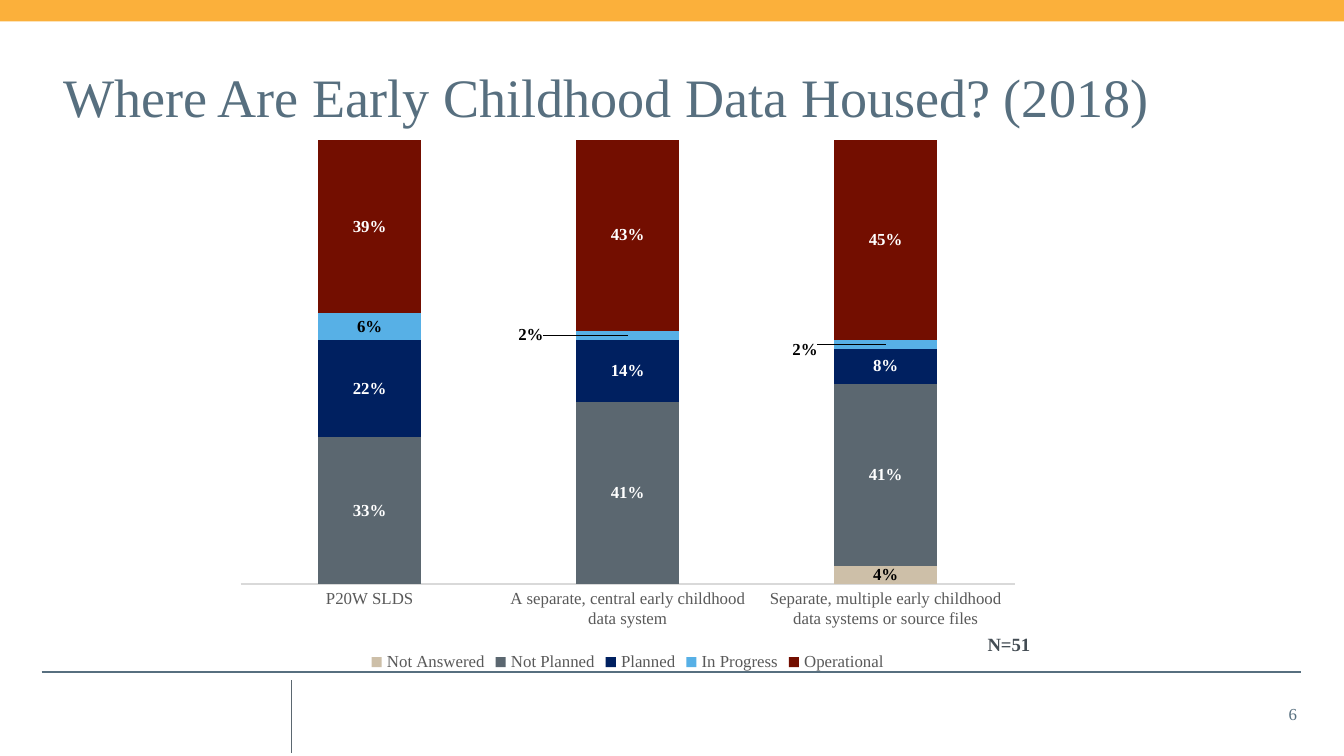
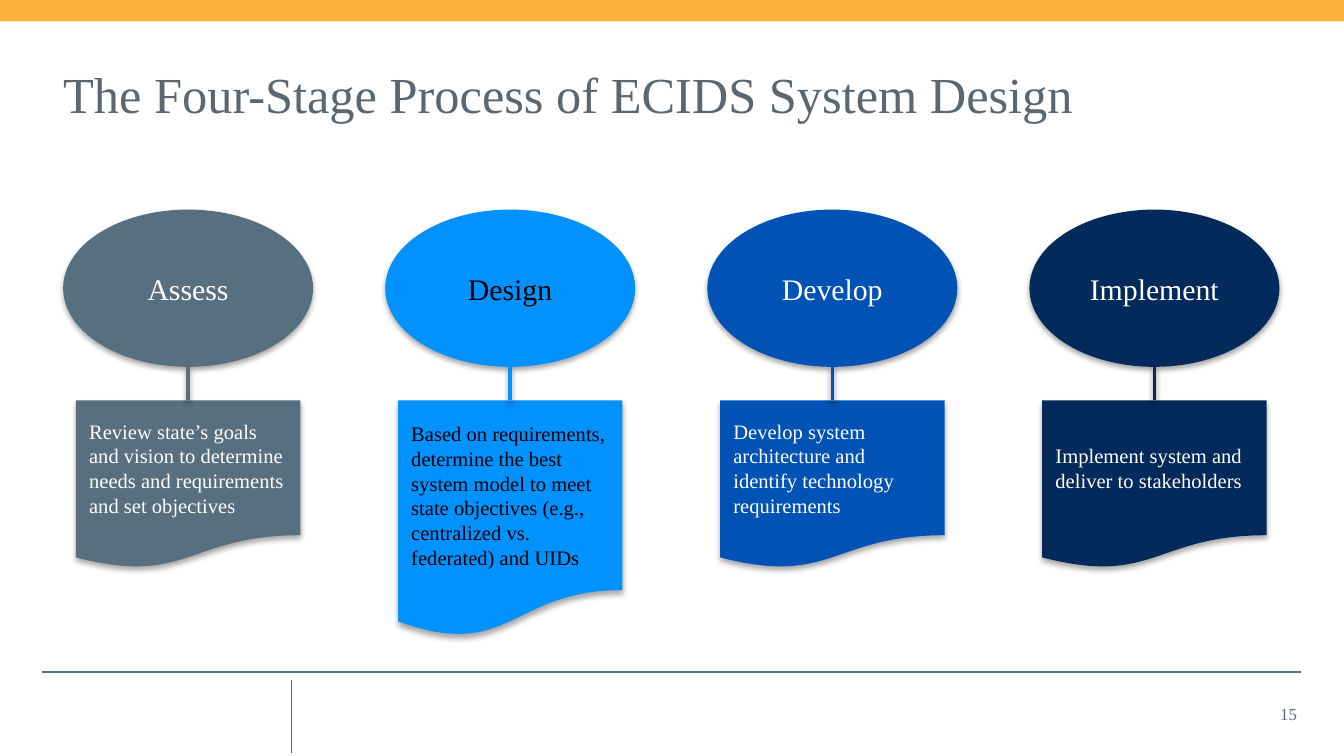
from collections import namedtuple

from pptx import Presentation
from pptx import util as u
from pptx.chart.data import CategoryChartData
from pptx.dml.color import RGBColor
from pptx.enum import chart as ch
from pptx.enum import shapes, text
from pptx.oxml import parse_xml
from pptx.oxml.ns import nsdecls, qn

FONT = "Times New Roman"
SLATE = RGBColor(0x57, 0x6F, 0x7F)
GRAY = RGBColor(0x5B, 0x67, 0x70)
AMBER = RGBColor(0xFB, 0xB0, 0x3B)
WHITE = RGBColor(0xFF, 0xFF, 0xFF)
BLACK = RGBColor(0, 0, 0)
NOTE = RGBColor(0x44, 0x4D, 0x54)
AXIS_TEXT = RGBColor(0x59, 0x59, 0x59)
AXIS_LINE = RGBColor(0xD9, 0xD9, 0xD9)
SAND = RGBColor(0xCD, 0xBF, 0xA8)
NAVY = RGBColor(0x00, 0x20, 0x60)
SKY = RGBColor(0x57, 0xB0, 0xE6)
MAROON = RGBColor(0x73, 0x0E, 0x00)
AZURE = RGBColor(0x01, 0x92, 0xFF)
COBALT = RGBColor(0x00, 0x53, 0xB5)
MIDNIGHT = RGBColor(0x04, 0x29, 0x5B)

Box = namedtuple("Box", "x y w h")
SLIDE = Box(0, 0, 10, 10 * 9 / 16)
TITLE = Box(0.47, 0.47, 9.06, 0.5)
PERCENT = r"0\%"
TOP, MIDDLE = text.MSO_ANCHOR.TOP, text.MSO_ANCHOR.MIDDLE
LEFT, CENTER, RIGHT = text.PP_ALIGN.LEFT, text.PP_ALIGN.CENTER, text.PP_ALIGN.RIGHT


def emu(box):
    return [u.Inches(v) for v in box]


def style_font(font, size, color, bold=False):
    font.name, font.size, font.bold = FONT, u.Pt(size), bold
    font.color.rgb = color


def write(sp, words, size, color, align=LEFT, bold=False, anchor=MIDDLE, insets=None):
    tf = sp.text_frame
    tf.text = words
    tf.word_wrap = True
    tf.vertical_anchor = anchor
    if insets:
        tf.margin_left = tf.margin_right = u.Inches(insets[0])
        tf.margin_top = tf.margin_bottom = u.Inches(insets[1])
    p = tf.paragraphs[0]
    p.alignment = align
    style_font(p.runs[0].font, size, color, bold)


def set_shadow(sp, opacity=0, distance=1.8):
    """Give a shape a soft shadow straight below it, or none at zero opacity."""
    effects = parse_xml(f"<a:effectLst {nsdecls('a')}/>")
    if opacity:
        effects.append(parse_xml(
            f'<a:outerShdw {nsdecls("a")} blurRad="{u.Pt(3.1)}" dist="{u.Pt(distance)}"'
            ' dir="5400000" rotWithShape="0"><a:srgbClr val="000000">'
            f'<a:alpha val="{opacity * 1000}"/></a:srgbClr></a:outerShdw>'))
    sp._element.spPr.append(effects)


def add_filled(s, kind, box, color):
    sp = s.shapes.add_shape(kind, *emu(box))
    sp.fill.solid()
    sp.fill.fore_color.rgb = color
    sp.line.fill.background()
    return sp


def add_line(s, x1, y1, x2, y2, color, width):
    line = s.shapes.add_connector(shapes.MSO_CONNECTOR.STRAIGHT, *emu((x1, y1, x2, y2)))
    line.line.color.rgb = color
    line.line.width = u.Pt(width)
    return line


def add_page(prs, title, size, color, number):
    """Add a slide with the band, the footer rules, the title and the number."""
    s = prs.slides.add_slide(prs.slide_layouts[5])
    set_shadow(add_filled(s, shapes.MSO_SHAPE.RECTANGLE, Box(0, 0, SLIDE.w, 0.16), AMBER))
    set_shadow(add_line(s, 0.31, 5, 9.68, 5, SLATE, 0.75))
    set_shadow(add_line(s, 2.17, 5.06, 2.17, 5.6, GRAY, 0.5))

    sp = s.shapes.title
    sp.left, sp.top, sp.width, sp.height = emu(TITLE)
    write(sp, title, size, color, anchor=TOP, insets=(0, 0))
    sp.text_frame.auto_size = text.MSO_AUTO_SIZE.NONE

    sp = s.shapes.add_textbox(*emu((9.3, 5.16, 0.39, 0.3)))
    write(sp, str(number), 9, SLATE, RIGHT, insets=(0.04, 0.02))
    return s


def manual_layout(**parts):
    tags = "".join(f'<c:{k} val="{v}"/>' for k, v in parts.items())
    return parse_xml(f"<c:layout {nsdecls('c')}><c:manualLayout>{tags}"
                     "</c:manualLayout></c:layout>")


def move_label(series, index, dx, dy, color):
    label = series.points[index].data_label
    style_font(label.font, 9, color, True)
    label.position = ch.XL_LABEL_POSITION.CENTER
    dlbl = series._element.xpath(f"c:dLbls/c:dLbl[c:idx/@val='{index}']")[0]
    dlbl.find(qn("c:idx")).addnext(manual_layout(x=dx, y=dy))


def hide_zero_labels(series):
    dlbls = series._element.find(qn("c:dLbls"))
    zeros = [i for i, v in enumerate(series.values) if v == 0]
    for place, i in enumerate(zeros):
        dlbls.insert(place, parse_xml(
            f'<c:dLbl {nsdecls("c")}><c:idx val="{i}"/><c:delete val="1"/></c:dLbl>'))


def hide_leader_lines(series):
    series._element.find(qn("c:dLbls")).append(parse_xml(
        f'<c:extLst {nsdecls("c")}><c:ext uri="{{CE6537A1-D6FC-4f65-9D91-7224C49458BB}}"'
        ' xmlns:c15="http://schemas.microsoft.com/office/drawing/2012/chart">'
        '<c15:showLeaderLines val="0"/></c:ext></c:extLst>'))


def add_housing_chart(s, box):
    rows = [
        ("Not Answered", (0, 0, 4), SAND, BLACK),
        ("Not Planned", (33, 41, 41), GRAY, WHITE),
        ("Planned", (22, 14, 8), NAVY, WHITE),
        ("In Progress", (6, 2, 2), SKY, BLACK),
        ("Operational", (39, 43, 45), MAROON, WHITE),
    ]
    data = CategoryChartData(number_format=PERCENT)
    data.categories = [
        "P20W SLDS",
        "A separate, central early childhood data system",
        "Separate, multiple early childhood data systems or source files",
    ]
    for name, values, *_ in rows:
        data.add_series(name, values)
    chart = s.shapes.add_chart(ch.XL_CHART_TYPE.COLUMN_STACKED, *emu(box), data).chart
    chart.has_title = False
    chart.font.name, chart.font.size = "Arial", u.Pt(10)
    chart.font.color.rgb = BLACK

    plot = chart.plots[0]
    plot.gap_width, plot.overlap, plot.vary_by_categories = 150, 100, False
    for series, (_, _, fill, ink) in zip(plot.series, rows):
        series.format.fill.solid()
        series.format.fill.fore_color.rgb = fill
        labels = series.data_labels
        labels.show_value = True
        labels.position = ch.XL_LABEL_POSITION.CENTER
        labels.number_format, labels.number_format_is_linked = PERCENT, False
        style_font(labels.font, 9, ink, True)
        hide_zero_labels(series)
    in_progress = plot.series[3]
    move_label(in_progress, 1, -0.12, 0, BLACK)
    move_label(in_progress, 2, -0.1, 0.01, BLACK)
    hide_leader_lines(in_progress)

    axis = chart.category_axis
    axis.major_tick_mark = ch.XL_TICK_MARK.NONE
    axis.format.line.color.rgb = AXIS_LINE
    axis.format.line.width = u.Pt(0.75)
    style_font(axis.tick_labels.font, 9, AXIS_TEXT)
    axis = chart.value_axis
    axis.minimum_scale, axis.maximum_scale = 0, 100
    axis.has_major_gridlines = axis.visible = False
    axis.tick_labels.number_format = PERCENT
    axis.tick_labels.number_format_is_linked = False

    chart.has_legend = True
    chart.legend.position = ch.XL_LEGEND_POSITION.BOTTOM
    chart.legend.include_in_layout = False
    style_font(chart.legend.font, 9, AXIS_TEXT)

    area = chart._chartSpace.chart.plotArea
    for old in area.findall(qn("c:layout")):
        area.remove(old)
    area.insert(0, manual_layout(layoutTarget="inner", xMode="edge", yMode="edge",
                                 x=0.02, y=0.02, w=0.96, h=0.81))


def add_stage(s, box, name, detail, doc_height, fill, ink):
    """Draw a stage: an oval, a short stem and a document centred below it."""
    oval_height, stem, doc_width = 1.17, 0.25, 1.67
    oval = add_filled(s, shapes.MSO_SHAPE.OVAL, box._replace(h=oval_height), fill)
    write(oval, name, 16, ink, CENTER)
    top = box.y + oval_height
    x = box.x + box.w / 2
    doc_box = Box(x - doc_width / 2, top + stem, doc_width, doc_height)
    doc = add_filled(s, shapes.MSO_SHAPE.FLOWCHART_DOCUMENT, doc_box, fill)
    write(doc, detail, 11, ink)
    for sp in (oval, doc):
        set_shadow(sp, 35)
    set_shadow(add_line(s, x, top, x, top + stem, fill, 2), 38, 1.6)


def add_stages(s, box):
    stages = [
        ("Assess", "Review state’s goals and vision to determine needs and "
         "requirements and set objectives", 1.25, SLATE, WHITE),
        ("Design", "Based on requirements, determine the best system model to meet "
         "state objectives (e.g., centralized vs. federated) and UIDs", 1.76, AZURE, BLACK),
        ("Develop", "Develop system architecture and identify technology requirements",
         1.25, COBALT, WHITE),
        ("Implement", "Implement system and deliver to stakeholders",
         1.25, MIDNIGHT, WHITE),
    ]
    width = 1.86
    step = (box.w - width) / (len(stages) - 1)
    for i, stage in enumerate(stages):
        add_stage(s, box._replace(x=box.x + i * step, w=width), *stage)


def main():
    prs = Presentation()
    prs.slide_width, prs.slide_height = u.Inches(SLIDE.w), u.Inches(SLIDE.h)

    s = add_page(prs, "Where Are Early Childhood Data Housed? (2018)", 29, SLATE, 6)
    add_housing_chart(s, Box(1.67, 0.96, 6, 4.08))
    note = s.shapes.add_textbox(*emu((7.25, 4.66, 0.7, 0.27)))
    write(note, "N=51", 10, NOTE, bold=True, anchor=TOP)
    note.text_frame.auto_size = text.MSO_AUTO_SIZE.SHAPE_TO_FIT_TEXT

    s = add_page(prs, "The Four-Stage Process of ECIDS System Design", 27, GRAY, 15)
    add_stages(s, Box(TITLE.x, 1.56, 9.05, 3.18))

    prs.save("out.pptx")


if __name__ == "__main__":
    main()
